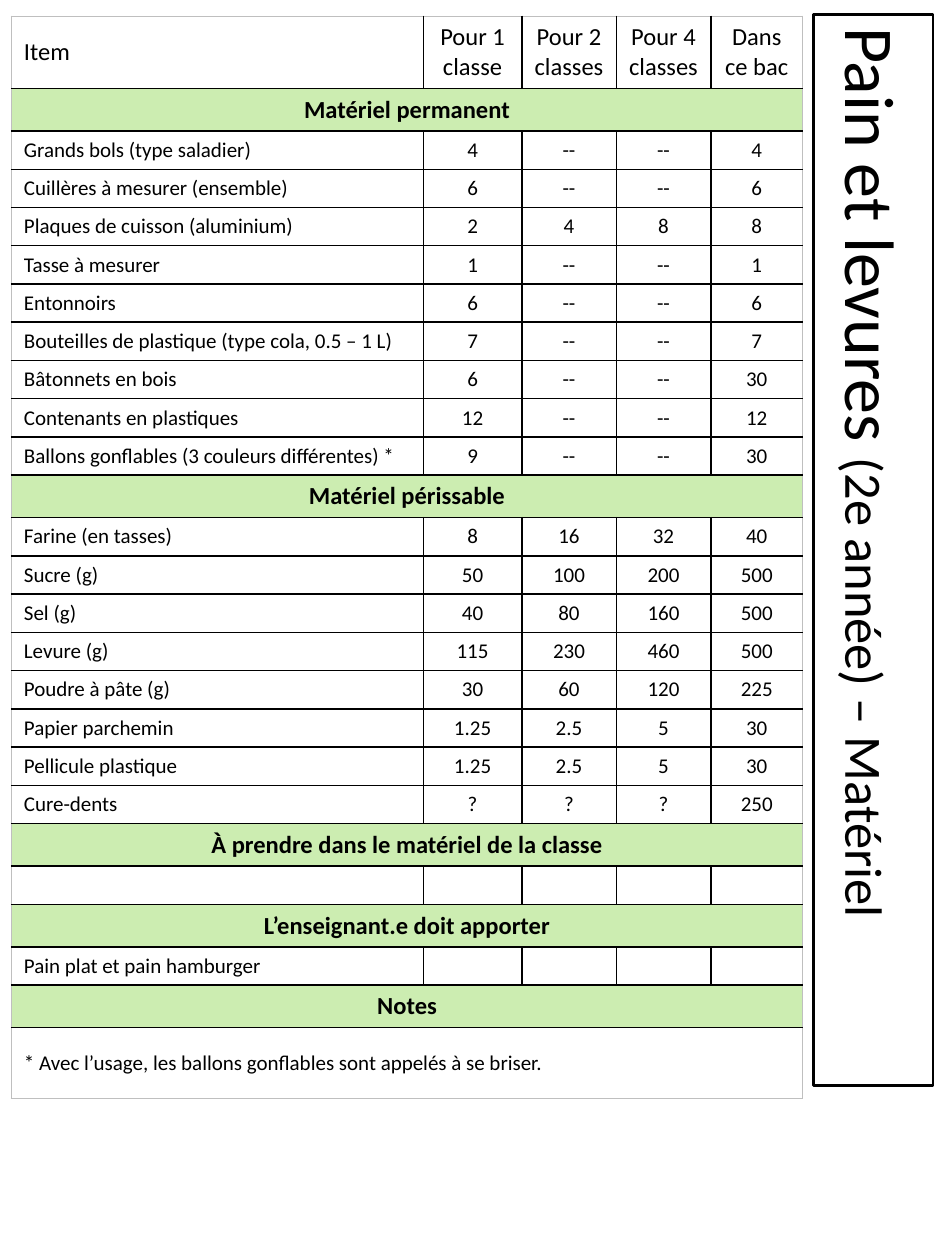
from lxml.etree import SubElement
from pptx import Presentation
from pptx.dml.color import RGBColor
from pptx.enum.text import MSO_ANCHOR, MSO_AUTO_SIZE, PP_ALIGN
from pptx.oxml.ns import qn
from pptx.util import Pt

BLACK = RGBColor(0x00, 0x00, 0x00)
GREEN = RGBColor(0xCC, 0xED, 0xB1)
GREY = RGBColor(0xBF, 0xBF, 0xBF)

HEADER = ("Item", "Pour 1 classe", "Pour 2 classes", "Pour 4 classes", "Dans ce bac")
SECTIONS = {
    "Matériel permanent": [
        ("Grands bols (type saladier)", "4", "--", "--", "4"),
        ("Cuillères à mesurer (ensemble)", "6", "--", "--", "6"),
        ("Plaques de cuisson (aluminium)", "2", "4", "8", "8"),
        ("Tasse à mesurer", "1", "--", "--", "1"),
        ("Entonnoirs", "6", "--", "--", "6"),
        ("Bouteilles de plastique (type cola, 0.5 – 1 L)", "7", "--", "--", "7"),
        ("Bâtonnets en bois", "6", "--", "--", "30"),
        ("Contenants en plastiques", "12", "--", "--", "12"),
        ("Ballons gonflables (3 couleurs différentes) *", "9", "--", "--", "30"),
    ],
    "Matériel périssable": [
        ("Farine (en tasses)", "8", "16", "32", "40"),
        ("Sucre (g)", "50", "100", "200", "500"),
        ("Sel (g)", "40", "80", "160", "500"),
        ("Levure (g)", "115", "230", "460", "500"),
        ("Poudre à pâte (g)", "30", "60", "120", "225"),
        ("Papier parchemin", "1.25", "2.5", "5", "30"),
        ("Pellicule plastique", "1.25", "2.5", "5", "30"),
        ("Cure-dents", "?", "?", "?", "250"),
    ],
    "À prendre dans le matériel de la classe": [("", "", "", "", "")],
    "L’enseignant.e doit apporter": [("Pain plat et pain hamburger", "", "", "", "")],
    "Notes": [("* Avec l’usage, les ballons gonflables sont appelés à se briser.",)],
}
COLUMN_WIDTHS = (235.5, 56.2, 54, 54, 52.6)
HEADER_HEIGHT, SECTION_HEIGHT, ITEM_HEIGHT, NOTE_HEIGHT = 41.4, 24.2, 21.8, 40.4


class Sheet:
    def __init__(self, slide, font="Calibri", color=BLACK):
        self.slide, self.font, self.color = slide, font, color

    def run(self, p, text, size, bold=False):
        r = p.add_run()
        r.text = text
        for name, value in {"name": self.font, "size": Pt(size), "bold": bold}.items():
            setattr(r.font, name, value)
        r.font.color.rgb = self.color

    def side_title(self, x, y, w, h, parts):
        """Place the title turned a quarter to the right; x, y, w, h are as seen."""
        sp = self.slide.shapes.title
        frame = {"left": Pt(x + (w - h) / 2), "top": Pt(y + (h - w) / 2),
                 "width": Pt(h), "height": Pt(w), "rotation": 90}
        for name, value in frame.items():
            setattr(sp, name, value)
        sp.line.color.rgb = self.color
        sp.line.width = Pt(1.5)
        tf = sp.text_frame
        tf.auto_size = MSO_AUTO_SIZE.NONE
        tf.vertical_anchor = MSO_ANCHOR.MIDDLE
        p = tf.paragraphs[0]
        p.alignment = PP_ALIGN.LEFT
        for text, size in parts:
            self.run(p, text, size)

    def border(self, cell, edge, color, width):
        ln = SubElement(cell._tc.get_or_add_tcPr(), qn(f"a:{edge}"), w=str(Pt(width)))
        fill = SubElement(ln, qn("a:solidFill"))
        SubElement(fill, qn("a:srgbClr"), val=str(color))

    def cell(self, cell, text, size, centred, bold, fill, outer):
        for edge in ("lnL", "lnR", "lnT", "lnB"):
            self.border(cell, edge, *((GREY, 0.5) if edge in outer else (self.color, 1)))
        if fill is None:
            cell.fill.background()
        else:
            cell.fill.solid()
            cell.fill.fore_color.rgb = fill
        cell.vertical_anchor = MSO_ANCHOR.MIDDLE
        p = cell.text_frame.paragraphs[0]
        p.alignment = PP_ALIGN.CENTER if centred else PP_ALIGN.LEFT
        if text:
            self.run(p, text, size, bold)
        else:
            SubElement(p._p, qn("a:endParaRPr"), sz=str(size * 100))

    def table(self, x, y, widths, rows):
        """Each row is (texts, height, size, fill); a single text spans all columns."""
        height = sum(row[1] for row in rows)
        table = self.slide.shapes.add_table(
            len(rows), len(widths), Pt(x), Pt(y), Pt(sum(widths)), Pt(height)).table
        table.first_row = table.horz_banding = False
        for column, width in zip(table.columns, widths):
            column.width = Pt(width)
        last_row, last_col = len(rows) - 1, len(widths) - 1
        for i, (texts, row_height, size, fill) in enumerate(rows):
            table.rows[i].height = Pt(row_height)
            spans = len(texts) == 1
            if spans:
                table.cell(i, 0).merge(table.cell(i, last_col))
            for j, text in enumerate(texts):
                sides = {"lnL": j == 0, "lnR": spans or j == last_col,
                         "lnT": i == 0, "lnB": i == last_row}
                outer = [edge for edge, on in sides.items() if on]
                heading = fill is not None
                self.cell(table.cell(i, j), text, size, heading or j > 0, heading, fill, outer)


def table_rows():
    rows = [(HEADER, HEADER_HEIGHT, 14, None)]
    for heading, items in SECTIONS.items():
        rows.append(((heading,), SECTION_HEIGHT, 14, GREEN))
        for item in items:
            rows.append((item, NOTE_HEIGHT if len(item) == 1 else ITEM_HEIGHT, 12, None))
    return rows


def main():
    prs = Presentation()
    prs.slide_width, prs.slide_height = Pt(540), Pt(720)
    s = Sheet(prs.slides.add_slide(prs.slide_layouts[5]))
    s.side_title(464.8, 8.3, 68.4, 612,
                 [("Pain et levures ", 40), ("(2e année) – Matériel", 30)])
    s.table(6.5, 9.2, COLUMN_WIDTHS, table_rows())
    prs.save("out.pptx")


if __name__ == "__main__":
    main()
